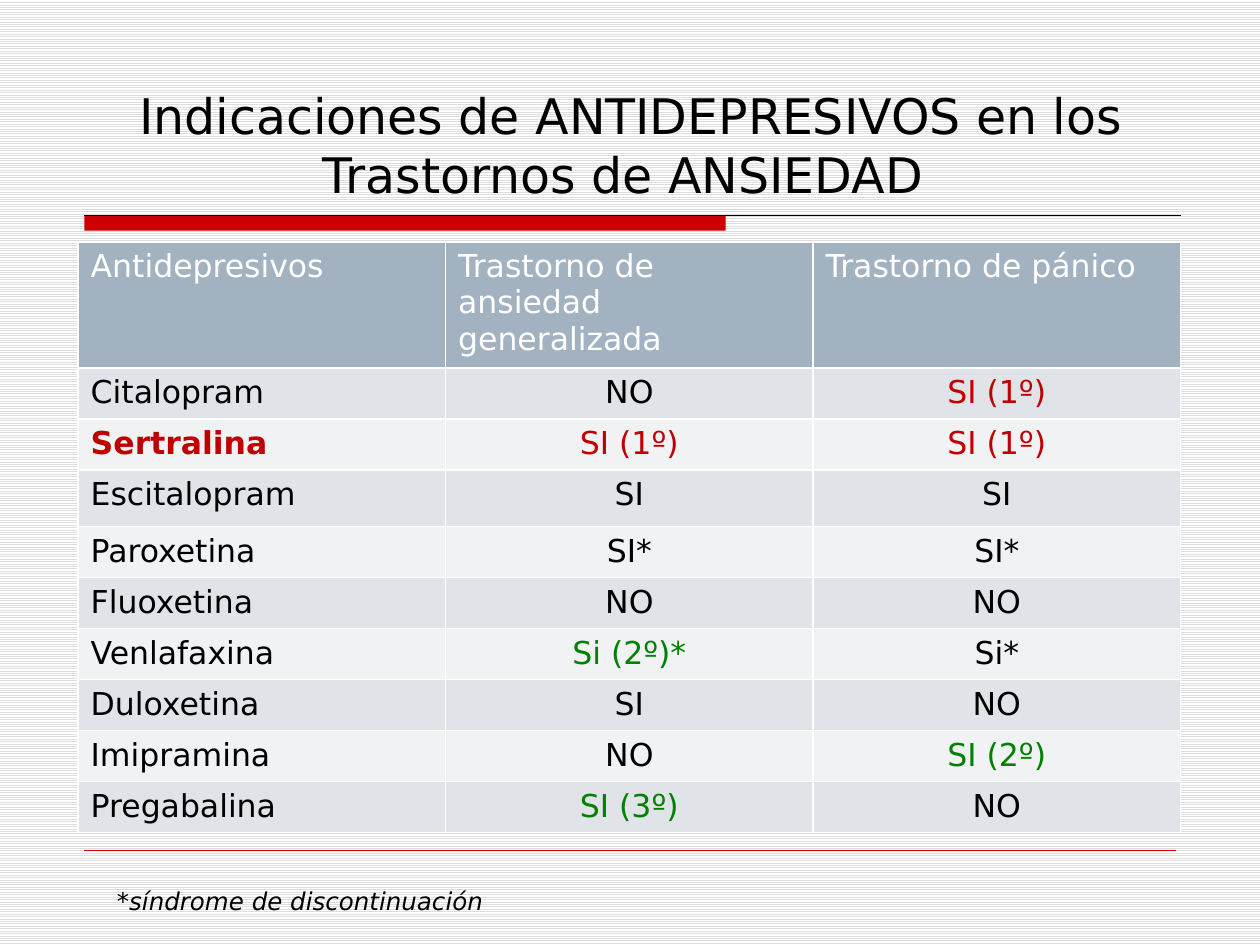
from lxml.etree import SubElement
from pptx import Presentation
from pptx.dml.color import RGBColor
from pptx.enum.dml import MSO_PATTERN
from pptx.enum.shapes import MSO_CONNECTOR, MSO_SHAPE
from pptx.enum.text import MSO_ANCHOR, PP_ALIGN
from pptx.oxml import parse_xml
from pptx.oxml.ns import nsdecls, qn
from pptx.util import Inches, Pt

FONT = "DejaVu Sans"
BLACK = RGBColor(0x00, 0x00, 0x00)
WHITE = RGBColor(0xFF, 0xFF, 0xFF)
STRIPE = RGBColor(0xDD, 0xDD, 0xDD)
RED = RGBColor(0xCC, 0x00, 0x00)
DARK_RED = RGBColor(0xC0, 0x00, 0x00)
GREEN = RGBColor(0x00, 0x80, 0x00)
HEADER = RGBColor(0xA3, 0xB2, 0xC1)
BANDS = [RGBColor(0xF0, 0xF2, 0xF4), RGBColor(0xE0, 0xE4, 0xE9)]

ROWS = [
    ("Antidepresivos", "Trastorno de ansiedad generalizada", "Trastorno de pánico"),
    ("Citalopram", "NO", "SI (1º)"),
    ("Sertralina", "SI (1º)", "SI (1º)"),
    ("Escitalopram", "SI", "SI"),
    ("Paroxetina", "SI*", "SI*"),
    ("Fluoxetina", "NO", "NO"),
    ("Venlafaxina", "Si (2º)*", "Si*"),
    ("Duloxetina", "SI", "NO"),
    ("Imipramina", "NO", "SI (2º)"),
    ("Pregabalina", "SI (3º)", "NO"),
]
FIRST_CHOICE = "Sertralina"

presentation = Presentation()
presentation.slide_width, presentation.slide_height = Inches(10), Inches(7.5)
slide = presentation.slides.add_slide(presentation.slide_layouts[6])


def add_text(text, left, top, width, height, size):
    shape = slide.shapes.add_textbox(Inches(left), Inches(top), Inches(width), Inches(height))
    shape.text_frame.word_wrap = True
    paragraph = shape.text_frame.paragraphs[0]
    paragraph.text = text
    paragraph.font.name, paragraph.font.size = FONT, Pt(size)
    paragraph.font.color.rgb = BLACK
    return shape.text_frame


# Striped background
background = slide.background.fill
background.patterned()
background.pattern = MSO_PATTERN.LIGHT_HORIZONTAL
background.fore_color.rgb, background.back_color.rgb = STRIPE, WHITE

# Red bar under the title, and the thin rules
bar = slide.shapes.add_shape(
    MSO_SHAPE.RECTANGLE, Inches(0.67), Inches(1.71), Inches(5.09), Inches(0.12))
bar.shadow.inherit = False
bar.fill.solid()
bar.fill.fore_color.rgb = RED
bar.line.fill.background()
for right, y, color, weight in [(9.37, 1.71, BLACK, 0.75), (9.33, 6.75, RED, 0.25)]:
    rule = slide.shapes.add_connector(
        MSO_CONNECTOR.STRAIGHT, Inches(0.67), Inches(y), Inches(right), Inches(y))
    rule.line.color.rgb, rule.line.width = color, Pt(weight)
    SubElement(rule._element.spPr, qn("a:effectLst"))

# Title
title = add_text("Indicaciones de ANTIDEPRESIVOS en los Trastornos de ANSIEDAD ",
                 0.63, 0.33, 8.75, 1.33, 28)
title.vertical_anchor = MSO_ANCHOR.BOTTOM
title.paragraphs[0].alignment = PP_ALIGN.CENTER

# Table: tall header, one slightly taller row, the rest share what is left
TABLE_WIDTH, TABLE_HEIGHT = 8.75, 4.69
special_heights = {0: 1, 3: 0.45}
row_height = (TABLE_HEIGHT - sum(special_heights.values())) / (len(ROWS) - len(special_heights))
table = slide.shapes.add_table(
    len(ROWS), 3, Inches(0.62), Inches(1.92), Inches(TABLE_WIDTH), Inches(TABLE_HEIGHT)).table

for row_index, texts in enumerate(ROWS):
    table.rows[row_index].height = Inches(special_heights.get(row_index, row_height))
    for column_index, text in enumerate(texts):
        cell = table.cell(row_index, column_index)
        cell.text = text
        cell.fill.solid()
        cell.fill.fore_color.rgb = BANDS[row_index % 2] if row_index else HEADER
        paragraph = cell.text_frame.paragraphs[0]
        if row_index and column_index:
            paragraph.alignment = PP_ALIGN.CENTER

        # Colour tells the line of treatment
        if row_index == 0:
            color = WHITE
        elif text == FIRST_CHOICE or "1º" in text:
            color = DARK_RED
        elif "º" in text:
            color = GREEN
        else:
            color = BLACK
        paragraph.font.name, paragraph.font.size = FONT, Pt(18)
        paragraph.font.bold = text == FIRST_CHOICE
        paragraph.font.color.rgb = color

        # White cell borders
        for position, side in enumerate(("lnL", "lnR", "lnT", "lnB")):
            cell._tc.get_or_add_tcPr().insert(position, parse_xml(
                f'<a:{side} {nsdecls("a")} w="{Pt(1)}"><a:solidFill>'
                f'<a:srgbClr val="{WHITE}"/></a:solidFill></a:{side}>'))

# Footnote
footnote = add_text("*síndrome de discontinuación", 0.83, 6.98, 7.17, 0.34, 14)
footnote.paragraphs[0].font.italic = True

presentation.save("out.pptx")
